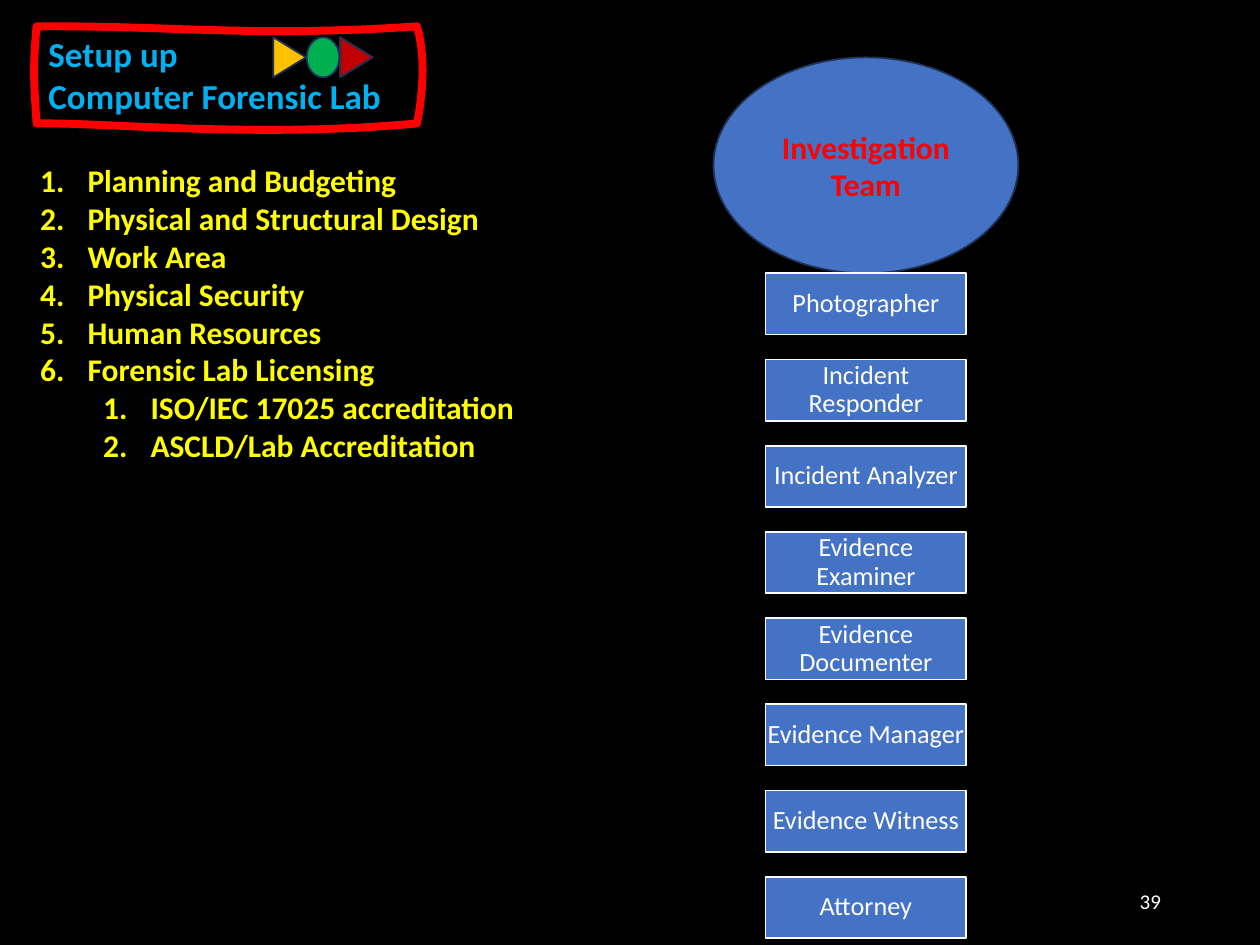
import pptx
import pptx.util
import pptx.oxml
import pptx.dml.color
import pptx.enum.shapes
import pptx.enum.text

Pt = pptx.util.Pt
RGBColor = pptx.dml.color.RGBColor
Shape = pptx.enum.shapes.MSO_SHAPE
Align = pptx.enum.text.PP_ALIGN
Anchor = pptx.enum.text.MSO_ANCHOR

BLACK = RGBColor(0x00, 0x00, 0x00)
WHITE = RGBColor(0xFF, 0xFF, 0xFF)
RED = RGBColor(0xFF, 0x00, 0x00)
DARK_RED = RGBColor(0xC0, 0x00, 0x00)
GREEN = RGBColor(0x00, 0xB0, 0x50)
AMBER = RGBColor(0xFF, 0xC0, 0x00)
YELLOW = RGBColor(0xFF, 0xFF, 0x00)
SKY = RGBColor(0x00, 0xB0, 0xF0)
BLUE = RGBColor(0x44, 0x72, 0xC4)
NAVY = RGBColor(0x1E, 0x32, 0x56)

# Content
HEADING = ["Setup up", "Computer Forensic Lab"]
STEPS = [
    ("Planning and Budgeting", 0),
    ("Physical and Structural Design", 0),
    ("Work Area", 0),
    ("Physical Security", 0),
    ("Human Resources", 0),
    ("Forensic Lab Licensing", 0),
    ("ISO/IEC 17025 accreditation", 1),
    ("ASCLD/Lab Accreditation", 1),
]
TEAM = "Investigation Team"
ROLES = ["Photographer", "Incident Responder", "Incident Analyzer", "Evidence Examiner",
         "Evidence Documenter", "Evidence Manager", "Evidence Witness", "Attorney"]
SIGNALS = [(Shape.ISOSCELES_TRIANGLE, AMBER), (Shape.OVAL, GREEN),
           (Shape.ISOSCELES_TRIANGLE, DARK_RED)]
PAGE_NUMBER = "39"

# Hand-drawn frame: start point, then Bezier curves (two controls and an end)
FRAME_START = (20.9, 15.1)
FRAME_CURVES = [
    ((96.5, 14.4), (144.7, 21.6), (238.3, 15.1)),
    ((242.6, 29.5), (242.6, 49), (238.3, 70.6)),
    ((146.2, 79.2), (59, 69.8), (20.9, 70.6)),
    ((19.4, 44.6), (18.7, 41), (20.9, 15.1)),
]
CURVE_STEPS = 24


def place(shape, left, top, width, height):
    shape.left, shape.top, shape.width, shape.height = map(Pt, (left, top, width, height))


def write(shape, lines, size, color, bold=False, align=Align.LEFT, anchor=Anchor.TOP):
    frame = shape.text_frame
    frame.text = "\n".join(lines)
    frame.word_wrap = True
    frame.auto_size = pptx.enum.text.MSO_AUTO_SIZE.NONE
    frame.vertical_anchor = anchor
    for paragraph in frame.paragraphs:
        paragraph.alignment = align
        paragraph.space_before = Pt(0)
        for run in paragraph.runs:
            run.font.name, run.font.size, run.font.bold = "Calibri", Pt(size), bold
            run.font.color.rgb = color
    return frame


def add_figure(slide, kind, box, fill, line):
    figure = slide.shapes.add_shape(kind, *map(Pt, box))
    figure.shadow.inherit = False
    figure.fill.solid()
    figure.fill.fore_color.rgb = fill
    figure.line.color.rgb = line
    figure.line.width = Pt(1)
    return figure


def number(paragraph, level):
    paragraph.level = level
    properties = paragraph._p.get_or_add_pPr()
    properties.set("marL", str(Pt(27 + 36 * level)))
    properties.set("indent", str(Pt(-27)))
    properties.append(pptx.oxml.parse_xml(
        '<a:buFont xmlns:a="http://schemas.openxmlformats.org/drawingml/2006/main"'
        ' typeface="+mj-lt"/>'))
    properties.append(pptx.oxml.parse_xml(
        '<a:buAutoNum xmlns:a="http://schemas.openxmlformats.org/drawingml/2006/main"'
        ' type="arabicPeriod"/>'))


def curve_points(start, first, second, end):
    for step in range(1, CURVE_STEPS + 1):
        t = step / CURVE_STEPS
        u = 1 - t
        yield tuple(round(100 * (u**3 * a + 3 * u * u * t * b + 3 * u * t * t * c + t**3 * d))
                    for a, b, c, d in zip(start, first, second, end))


def add_frame(slide):
    points, start = [], FRAME_START
    for curve in FRAME_CURVES:
        points += curve_points(start, *curve)
        start = curve[-1]
    # Points are in hundredths of a point
    builder = slide.shapes.build_freeform(*points[-1], scale=Pt(1) / 100)
    builder.add_line_segments(points, close=True)
    outline = builder.convert_to_shape()
    outline.shadow.inherit = False
    outline.fill.background()
    outline.line.color.rgb = RED
    outline.line.width = Pt(4.5)


def main():
    deck = pptx.Presentation()
    deck.slide_width, deck.slide_height = Pt(720), Pt(540)
    slide = deck.slides.add_slide(deck.slide_layouts[1])
    slide.background.fill.solid()
    slide.background.fill.fore_color.rgb = BLACK

    # Heading with its frame and signal marks
    heading = slide.shapes.title
    place(heading, 20.5, 15.1, 218, 55.5)
    write(heading, HEADING, 20, SKY, bold=True)
    add_frame(slide)
    for index, (kind, color) in enumerate(SIGNALS):
        mark = add_figure(slide, kind, (154 + 19.1 * index, 23.4, 23, 18.7), color, NAVY)
        mark.rotation = 90

    # Numbered steps
    steps = slide.placeholders[1]
    place(steps, 15.8, 88.6, 530, 181.4)
    frame = write(steps, [text for text, _ in STEPS], 18, YELLOW, bold=True)
    for paragraph, (_, level) in zip(frame.paragraphs, STEPS):
        number(paragraph, level)

    # Team and its roles
    team = add_figure(slide, Shape.OVAL, (407.7, 32.8, 174.2, 123.4), BLUE, NAVY)
    write(team, [TEAM], 18, RED, bold=True, align=Align.CENTER, anchor=Anchor.MIDDLE)
    for index, role in enumerate(ROLES):
        box = add_figure(slide, Shape.RECTANGLE, (437.5, 156.2 + 49.26 * index, 114.7, 35),
                         BLUE, WHITE)
        frame = write(box, [role], 15, WHITE, align=Align.CENTER, anchor=Anchor.MIDDLE)
        frame.margin_left = frame.margin_right = Pt(0.75)
        frame.margin_top = frame.margin_bottom = Pt(0.75)
        frame.paragraphs[0].line_spacing = 0.9

    # Page number
    page = slide.shapes.add_textbox(*map(Pt, (508.5, 500.5, 162, 28.75)))
    write(page, [PAGE_NUMBER], 12, WHITE, align=Align.RIGHT, anchor=Anchor.MIDDLE)

    deck.save("out.pptx")


if __name__ == "__main__":
    main()
